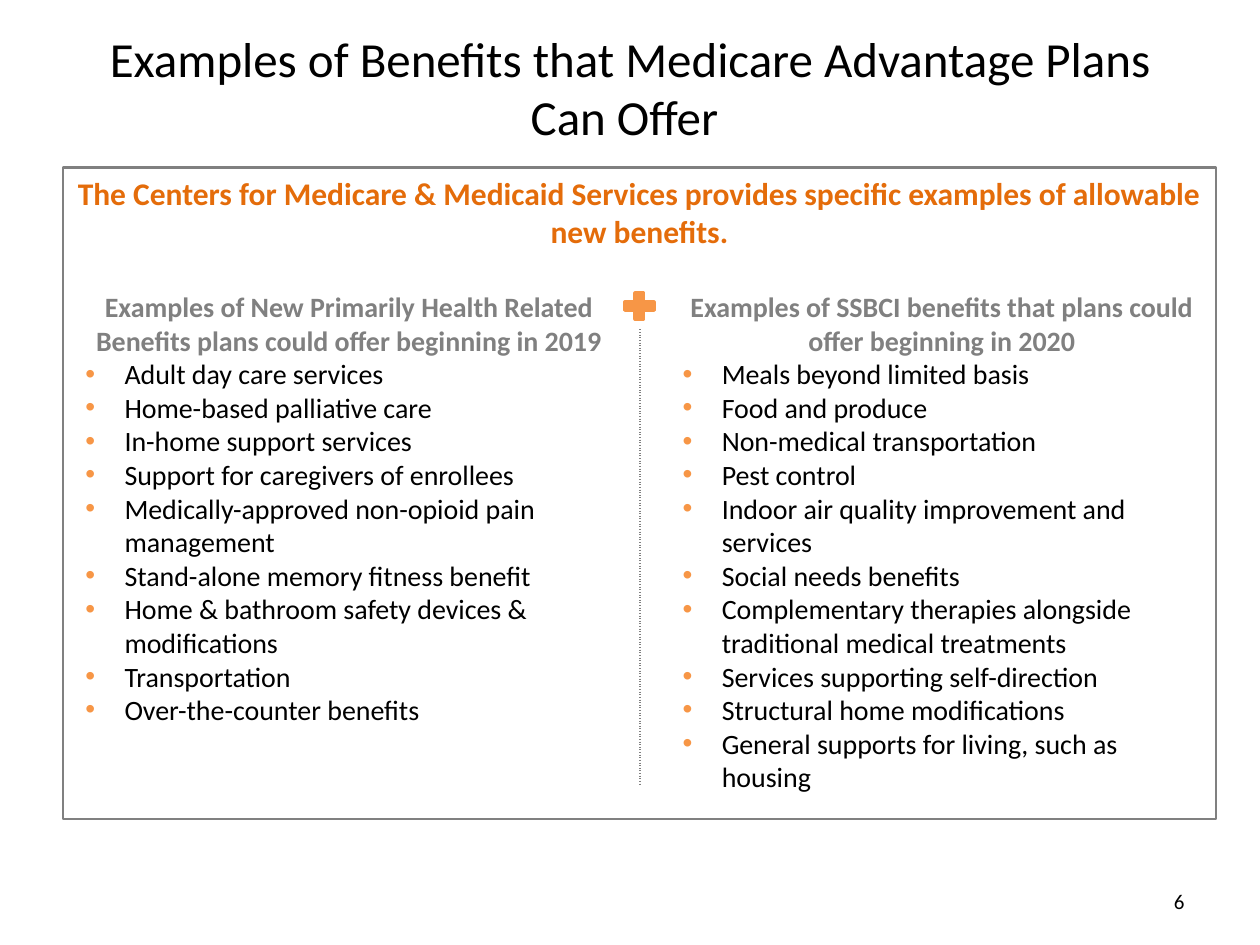
from lxml import etree
from pptx import Presentation
from pptx.dml.color import RGBColor
from pptx.enum.shapes import MSO_SHAPE
from pptx.enum.text import MSO_ANCHOR, MSO_AUTO_SIZE, PP_ALIGN
from pptx.oxml.ns import qn
from pptx.util import Inches, Pt

CENTER, RIGHT, LEFT = PP_ALIGN.CENTER, PP_ALIGN.RIGHT, PP_ALIGN.LEFT
MIDDLE, TOP = MSO_ANCHOR.MIDDLE, MSO_ANCHOR.TOP
PLUS, FIXED = MSO_SHAPE.MATH_PLUS, MSO_AUTO_SIZE.NONE

TITLE = "Examples of Benefits that Medicare Advantage Plans Can Offer "
LEAD = ("The Centers for Medicare & Medicaid Services provides specific "
        "examples of allowable new benefits.")
PAGE = "6"
COLUMNS = [
    {"box": (5.32, 2.25, 4.31, 4.14),
     "head": "Examples of SSBCI benefits that plans could offer beginning "
             "in 2020",
     "items": ["Meals beyond limited basis",
               "Food and produce",
               "Non-medical transportation",
               "Pest control",
               "Indoor air quality improvement and services",
               "Social needs benefits",
               "Complementary therapies alongside traditional medical "
               "treatments",
               "Services supporting self-direction",
               "Structural home modifications",
               "General supports for living, such as housing"]},
    {"box": (0.58, 2.25, 4.38, 3.87),
     "head": "Examples of New Primarily Health Related Benefits plans could "
             "offer beginning in 2019",
     "items": ["Adult day care services",
               "Home-based palliative care",
               "In-home support services",
               "Support for caregivers of enrollees",
               "Medically-approved non-opioid pain management",
               "Stand-alone memory fitness benefit",
               "Home & bathroom safety devices & modifications",
               "Transportation",
               "Over-the-counter benefits"]},
]
THEME = {
    "font": "Calibri",
    "ink": RGBColor.from_string("000000"),
    "paper": RGBColor.from_string("FFFFFF"),
    "gray": RGBColor.from_string("808080"),
    "lead": RGBColor.from_string("E46C0A"),
    "accent": RGBColor.from_string("F79646"),
    "title_size": 28, "lead_size": 18, "text_size": 16, "page_size": 12,
}
INDENT = 0.31
PLAIN, DOTS = ("paper", 1, "solid"), ("gray", 1, "sysDot")
BASE = ("paper", 3, "solid")


def place(shape, box):
    shape.left, shape.top, shape.width, shape.height = map(Inches, box)


def style(par, size, color, align=LEFT, bold=False):
    par.alignment = align
    for run in par.runs:
        font = run.font
        font.name, font.size, font.bold = THEME["font"], Pt(THEME[size]), bold
        font.color.rgb = THEME[color]


def set_bullet(par, char=None):
    """Give the paragraph a hanging bullet, or none without a char."""
    props = par._p.get_or_add_pPr()
    indent = Inches(INDENT) if char else 0
    props.set("marL", str(indent))
    props.set("indent", str(-indent))
    if char:
        color = etree.SubElement(props, qn("a:buClr"))
        etree.SubElement(color, qn("a:srgbClr"), val=str(THEME["accent"]))
        etree.SubElement(props, qn("a:buFont"), typeface="Arial")
        etree.SubElement(props, qn("a:buChar"), char=char)
    else:
        etree.SubElement(props, qn("a:buNone"))


def prepare(shape, anchor):
    frame = shape.text_frame
    frame.word_wrap, frame.auto_size = True, FIXED
    frame.vertical_anchor = anchor
    return frame


def add_text(slide, box, text, anchor=TOP):
    frame = prepare(slide.shapes.add_textbox(*map(Inches, box)), anchor)
    frame.text = text
    return frame


def add_column(slide, column):
    lines = [column["head"], *column["items"]]
    frame = add_text(slide, column["box"], "\n".join(lines))
    head, *items = frame.paragraphs
    style(head, "text_size", "gray", CENTER, True)
    for par in items:
        style(par, "text_size", "ink")
        set_bullet(par, "•")


def set_borders(cell, left, right):
    props = cell._tc.get_or_add_tcPr()
    sides = {"a:lnL": left, "a:lnR": right, "a:lnT": PLAIN, "a:lnB": BASE}
    for tag, (color, width, dash) in sides.items():
        line = etree.SubElement(props, qn(tag), w=str(Pt(width)))
        fill = etree.SubElement(line, qn("a:solidFill"))
        etree.SubElement(fill, qn("a:srgbClr"), val=str(THEME[color]))
        etree.SubElement(line, qn("a:prstDash"), val=dash)


def add_divider(slide):
    """Two empty cells share a dotted border, with a plus above it."""
    box = map(Inches, (4.84, 2.62, 0.47, 3.59))
    table = slide.shapes.add_table(1, 2, *box).table
    table.first_row = table.horz_banding = False
    for col, (left, right) in enumerate([(PLAIN, DOTS), (DOTS, PLAIN)]):
        cell = table.cell(0, col)
        set_borders(cell, left, right)
        cell.fill.background()

    plus = slide.shapes.add_shape(
        PLUS, *map(Inches, (4.92, 2.29, 0.31, 0.28)))
    plus.shadow.inherit = False
    plus.fill.solid()
    plus.fill.fore_color.rgb = plus.line.color.rgb = THEME["accent"]
    plus.line.width = Pt(2)


def main():
    deck = Presentation()
    deck.slide_width, deck.slide_height = Inches(10), Inches(7.5)
    slide = deck.slides.add_slide(deck.slide_layouts[1])
    title, body = slide.placeholders

    place(title, (0.5, 0.3, 9, 0.78))
    frame = prepare(title, MIDDLE)
    frame.text = TITLE
    style(frame.paragraphs[0], "title_size", "ink", CENTER)

    page = add_text(slide, (7.17, 6.95, 2.33, 0.4), PAGE, MIDDLE)
    style(page.paragraphs[0], "page_size", "ink", RIGHT)

    place(body, (0.5, 1.33, 9.15, 5.17))
    body.line.color.rgb, body.line.width = THEME["gray"], Pt(1.5)
    frame = prepare(body, TOP)
    frame.text = LEAD
    lead = frame.paragraphs[0]
    style(lead, "lead_size", "lead", CENTER, True)
    lead.space_before = Pt(3.6)
    set_bullet(lead)

    add_divider(slide)
    for column in COLUMNS:
        add_column(slide, column)
    deck.save("out.pptx")


if __name__ == "__main__":
    main()
